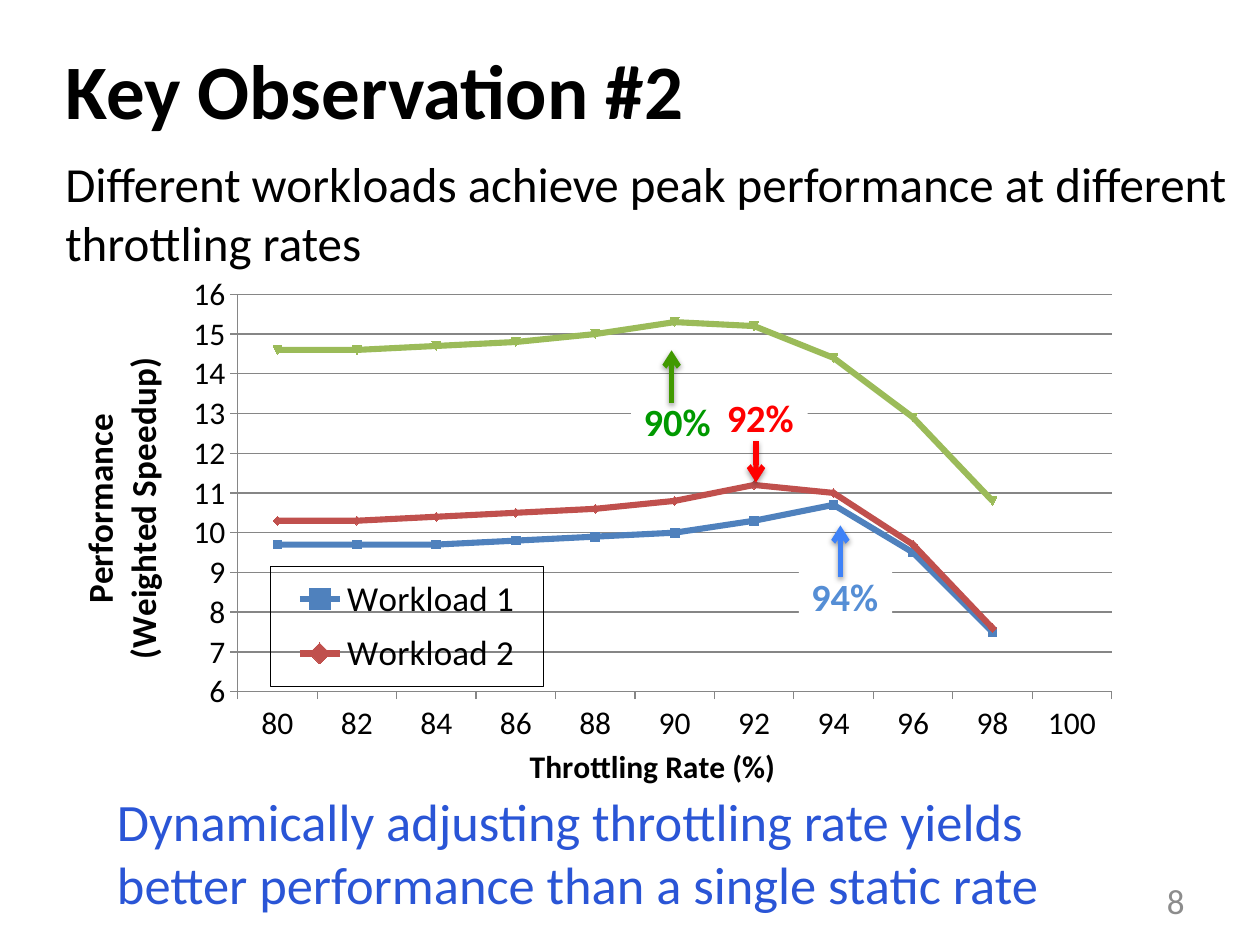
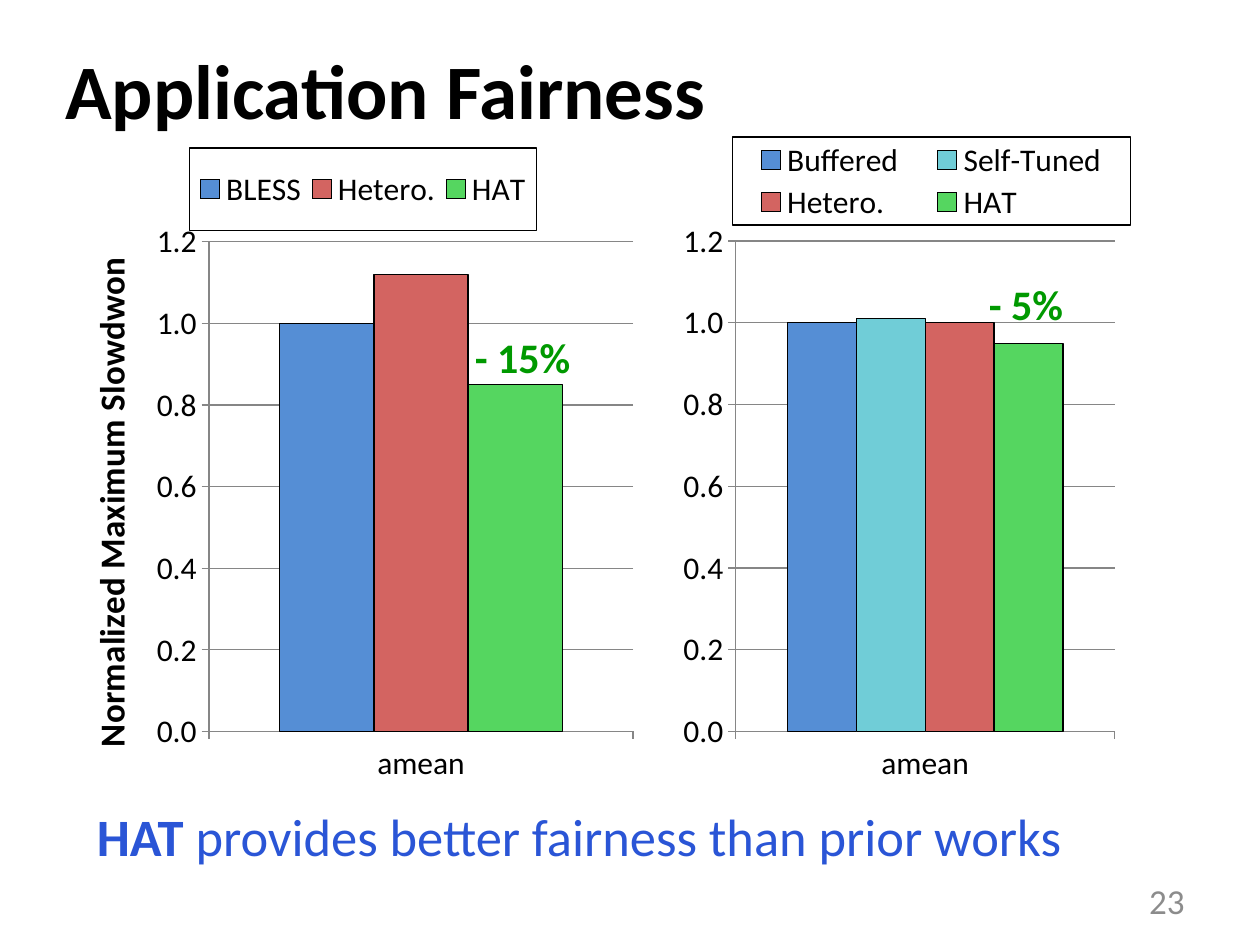
from dataclasses import dataclass

from lxml import etree
from pptx import Presentation
from pptx.chart.data import CategoryChartData
from pptx.dml.color import RGBColor
from pptx.enum.chart import XL_CHART_TYPE, XL_LEGEND_POSITION, XL_TICK_MARK
from pptx.enum.shapes import MSO_CONNECTOR, MSO_SHAPE
from pptx.enum.text import MSO_ANCHOR, PP_ALIGN
from pptx.oxml import parse_xml
from pptx.oxml.ns import nsdecls, qn
from pptx.util import Inches, Pt

LINE = XL_CHART_TYPE.LINE
COLUMN = XL_CHART_TYPE.COLUMN_CLUSTERED
LEGEND_RIGHT = XL_LEGEND_POSITION.RIGHT
TICK_OUT = XL_TICK_MARK.OUTSIDE
STRAIGHT = MSO_CONNECTOR.STRAIGHT
RECTANGLE = MSO_SHAPE.RECTANGLE
TOP, MIDDLE = MSO_ANCHOR.TOP, MSO_ANCHOR.MIDDLE
LEFT, CENTER, RIGHT = PP_ALIGN.LEFT, PP_ALIGN.CENTER, PP_ALIGN.RIGHT


@dataclass(frozen=True)
class Theme:
    font: str = "Calibri"
    black: str = "000000"
    white: str = "FFFFFF"
    gray: str = "8C8C8C"
    grid: str = "868686"
    takeaway: str = "2A55D6"
    gain: str = "009900"
    peak_red: str = "FF0000"
    peak_blue: str = "558ED5"
    arrow_green: str = "419900"
    arrow_blue: str = "3E82F7"
    workloads: tuple = ("4F81BD", "C0504D", "9BBB59")
    baseline: str = "558ED5"
    self_tuned: str = "70CDD7"
    hetero: str = "D36461"
    hat: str = "55D660"
    title_pt: int = 44
    takeaway_pt: int = 30
    body_pt: int = 28
    gain_pt: int = 24
    peak_pt: int = 22
    large_pt: int = 20
    axis_pt: int = 18


T = Theme()


def rgb(color):
    return RGBColor.from_string(color)


def style_font(font, size, color=T.black, bold=None):
    font.name = T.font
    font.size = Pt(size)
    font.color.rgb = rgb(color)
    font.bold = bold


def write(s, text, size, color, bold=False, align=LEFT, anchor=TOP, wrap=True):
    tf = s.text_frame
    tf.word_wrap = wrap
    tf.vertical_anchor = anchor
    p = tf.paragraphs[0]
    p.text = text
    p.alignment = align
    style_font(p.font, size, color, bold)
    return p


def add_text(slide, box, text, size, color=T.black, **options):
    s = slide.shapes.add_textbox(*map(Inches, box))
    return write(s, text, size, color, **options)


def add_slide(prs, title, number):
    slide = prs.slides.add_slide(prs.slide_layouts[6])
    add_text(slide, (0.42, 0.08, 9, 1.25), title, T.title_pt, bold=True, anchor=MIDDLE)
    add_text(slide, (7.17, 6.95, 2.33, 0.4), str(number), T.large_pt, T.gray,
             align=RIGHT, anchor=MIDDLE)
    return slide


def add_peak_label(slide, left, top, text, color):
    s = slide.shapes.add_shape(RECTANGLE, *map(Inches, (left, top, 0.74, 0.47)))
    s.shadow.inherit = False
    s.fill.solid()
    s.fill.fore_color.rgb = rgb(T.white)
    s.line.fill.background()
    write(s, text, T.peak_pt, color, bold=True, wrap=False)


def add_arrow(slide, x, start, end, color):
    s = slide.shapes.add_connector(STRAIGHT, *map(Inches, (x, start, x, end)))
    s.line.color.rgb = rgb(color)
    s.line.width = Pt(3)
    etree.SubElement(s.line._get_or_add_ln(), qn("a:tailEnd"), type="arrow")
    s._element.spPr.append(parse_xml(
        f'<a:effectLst {nsdecls("a")}><a:outerShdw blurRad="39370" dist="20320" '
        'dir="5400000" rotWithShape="0"><a:srgbClr val="000000">'
        '<a:alpha val="38000"/></a:srgbClr></a:outerShdw></a:effectLst>'))


def manual_layout(box, inner=False):
    layout = parse_xml(f'<c:layout {nsdecls("c")}><c:manualLayout/></c:layout>')
    settings = [("layoutTarget", "inner")] if inner else []
    settings += [("xMode", "edge"), ("yMode", "edge"), *zip("xywh", map(str, box))]
    for name, value in settings:
        etree.SubElement(layout[0], qn(f"c:{name}"), val=value)
    return layout


def drop(parent, tag):
    for child in parent.findall(qn(tag)):
        parent.remove(child)


def place_plot(chart, box):
    area = chart._chartSpace.chart.plotArea
    drop(area, "c:layout")
    area.insert(0, manual_layout(box, inner=True))


def add_legend(chart, box, size, hidden=()):
    chart.has_legend = True
    legend = chart.legend
    legend.position = LEGEND_RIGHT
    legend.include_in_layout = False
    style_font(legend.font, size)
    root = legend._element
    drop(root, "c:layout")
    overlay = root.find(qn("c:overlay"))
    for idx in hidden:
        overlay.addprevious(parse_xml(
            f'<c:legendEntry {nsdecls("c")}><c:idx val="{idx}"/>'
            '<c:delete val="1"/></c:legendEntry>'))
    overlay.addprevious(manual_layout(box))
    overlay.addnext(parse_xml(
        f'<c:spPr {nsdecls("c", "a")}><a:noFill/><a:ln w="9525"><a:solidFill>'
        f'<a:srgbClr val="{T.black}"/></a:solidFill></a:ln></c:spPr>'))


def add_axis_title(axis, text, size, rotation=0):
    tf = axis.axis_title.text_frame
    tf.text = text
    tf._txBody.bodyPr.set("rot", str(rotation * 60000))
    for p in tf.paragraphs:
        p.alignment = CENTER
        style_font(p.font, size, bold=True)


def style_axis(axis):
    axis.major_tick_mark = TICK_OUT
    axis.format.line.color.rgb = rgb(T.grid)
    style_font(axis.tick_labels.font, T.axis_pt)


def add_chart(slide, kind, box, plot, categories, series, scale, number_format):
    data = CategoryChartData()
    data.categories = categories
    for name, values, _ in series:
        data.add_series(name, values)
    chart = slide.shapes.add_chart(kind, *map(Inches, box), data).chart
    chart.has_title = False
    style_font(chart.font, 10)
    place_plot(chart, plot)
    axis = chart.value_axis
    axis.minimum_scale, axis.maximum_scale, axis.major_unit = scale
    axis.has_major_gridlines = True
    axis.major_gridlines.format.line.color.rgb = rgb(T.grid)
    axis.tick_labels.number_format = number_format
    axis.tick_labels.number_format_is_linked = False
    style_axis(axis)
    style_axis(chart.category_axis)
    chart.plots[0].vary_by_categories = False
    return chart


def add_line_chart(slide, box, plot, categories, series, scale):
    chart = add_chart(slide, LINE, box, plot, categories, series, scale, "0")
    for line, (_, _, color) in zip(chart.plots[0].series, series):
        line.smooth = False
        line.marker.style = None
        line.format.line.color.rgb = rgb(color)
        line.format.line.width = Pt(3.5)
    return chart


def add_fairness_chart(slide, box, plot, series):
    chart = add_chart(slide, COLUMN, box, plot, ["amean"], series, (0, 1.2, 0.2), "0.0")
    chart.plots[0].gap_width = 150
    for bar, (_, _, color) in zip(chart.plots[0].series, series):
        bar.format.fill.solid()
        bar.format.fill.fore_color.rgb = rgb(color)
        bar.format.line.color.rgb = rgb(T.black)
        bar.format.line.width = Pt(0.75)
    return chart


def build_observation(prs):
    slide = add_slide(prs, "Key Observation #2", 8)
    speedups = [
        (9.7, 9.7, 9.7, 9.8, 9.9, 10, 10.3, 10.7, 9.5, 7.5, None),
        (10.3, 10.3, 10.4, 10.5, 10.6, 10.8, 11.2, 11, 9.7, 7.6, None),
        (14.6, 14.6, 14.7, 14.8, 15, 15.3, 15.2, 14.4, 12.9, 10.8, None),
    ]
    series = [(f"Workload {i}", values, color)
              for i, (values, color) in enumerate(zip(speedups, T.workloads), 1)]
    rates = [str(rate) for rate in range(80, 101, 2)]
    chart = add_line_chart(slide, (0.5, 2.17, 8.67, 4.15), (0.16, 0.04, 0.8, 0.76),
                           rates, series, (6, 16, 1))
    add_axis_title(chart.category_axis, "Throttling Rate (%)", T.axis_pt)
    add_axis_title(chart.value_axis, "Performance\n(Weighted Speedup)", T.large_pt, -90)
    add_legend(chart, (0.19, 0.56, 0.25, 0.23), T.large_pt, hidden=[2])

    add_text(slide, (0.42, 1.17, 9.42, 1.04),
             "Different workloads achieve peak performance at different throttling rates",
             T.body_pt)
    add_text(slide, (0.83, 6.21, 8.25, 1.11),
             "Dynamically adjusting throttling rate yields better performance "
             "than a single static rate", T.takeaway_pt, T.takeaway)
    for left, top, text, color in [(5.01, 3.11, "90%", T.gain),
                                   (5.67, 3.08, "92%", T.peak_red),
                                   (6.34, 4.5, "94%", T.peak_blue)]:
        add_peak_label(slide, left, top, text, color)
    for x, start, end, color in [(6.67, 4.58, 4.17, T.arrow_blue),
                                 (6, 3.5, 3.83, T.peak_red),
                                 (5.33, 3.2, 2.78, T.arrow_green)]:
        add_arrow(slide, x, start, end, color)


def build_fairness(prs):
    slide = add_slide(prs, "Application Fairness", 23)
    p = add_text(slide, (0.67, 6.33, 8.58, 0.61), "HAT ", T.takeaway_pt, T.takeaway)
    p.runs[0].font.bold = True
    p.add_run().text = "provides better fairness than prior works"

    chart = add_fairness_chart(
        slide, (0.42, 1.17, 4.92, 5.25), (0.252, 0.142, 0.684, 0.741),
        [("BLESS", [1], T.baseline), ("Hetero.", [1.12], T.hetero),
         ("HAT", [0.85], T.hat)])
    add_axis_title(chart.value_axis, "Normalized Maximum Slowdwon", T.large_pt, -90)
    add_legend(chart, (0.22, 0, 0.56, 0.125), T.axis_pt)

    chart = add_fairness_chart(
        slide, (5.17, 1, 4.58, 5.5), (0.146, 0.166, 0.657, 0.708),
        [("Buffered", [1], T.baseline), ("Self-Tuned", [1.01], T.self_tuned),
         ("Hetero.", [1], T.hetero), ("HAT", [0.95], T.hat)])
    add_legend(chart, (0.14, 0.016, 0.69, 0.127), T.axis_pt)

    for box, text in [((3.67, 2.58, 0.97, 0.5), "- 15%"), ((7.75, 2.16, 0.8, 0.5), "- 5%")]:
        add_text(slide, box, text, T.gain_pt, T.gain, bold=True, wrap=False)


def main():
    prs = Presentation()
    prs.slide_width, prs.slide_height = Inches(10), Inches(7.5)
    build_observation(prs)
    build_fairness(prs)
    prs.save("out.pptx")


if __name__ == "__main__":
    main()
